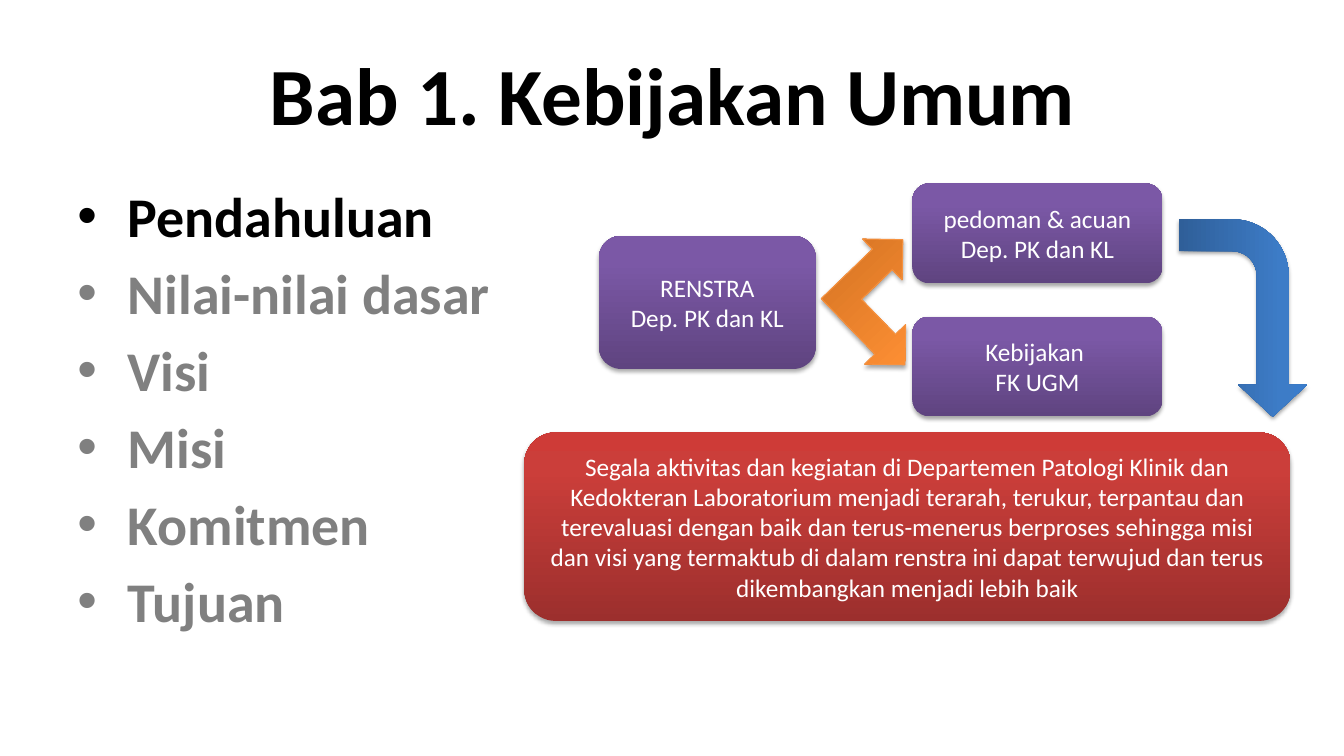
from lxml.etree import SubElement
from pptx import Presentation
from pptx.dml.color import RGBColor
from pptx.enum.shapes import MSO_SHAPE as Preset
from pptx.enum.text import MSO_ANCHOR as Anchor, PP_ALIGN as Align
from pptx.oxml.ns import qn
from pptx.util import Inches, Pt

COLOURS = {"black": "000000", "grey": "808080", "white": "FFFFFF", "orange edge": "F69240"}
GRADIENTS = {
    "purple": ("5F4480", "7B58A6", "7C57A8"),
    "orange": ("CC6E20", "FF9034", "FF9136"),
    "red": ("9C2F2D", "CB3E3A", "CE3B37"),
    "blue": ("2F5F99", "3D7CC7", "3A7CCB"),
}
STOPS = (0, 80, 100)
TOPICS = ("Pendahuluan", "Nilai-nilai dasar", "Visi", "Misi", "Komitmen", "Tujuan")
BOXES = (
    ((9.05, 1.82, 2.48, 0.99), "purple", ("pedoman & acuan", "Dep. PK dan KL")),
    ((5.94, 2.34, 2.15, 1.32), "purple", ("RENSTRA", "Dep. PK dan KL")),
    ((9.05, 3.14, 2.48, 0.99), "purple", ("Kebijakan ", "FK UGM")),
    ((5.2, 4.29, 7.6, 1.87), "red", (
        "Segala aktivitas dan kegiatan di Departemen Patologi Klinik dan "
        "Kedokteran Laboratorium menjadi terarah, terukur, terpantau dan "
        "terevaluasi dengan baik dan terus-menerus berproses sehingga misi "
        "dan visi yang termaktub di dalam renstra ini dapat terwujud dan terus "
        "dikembangkan menjadi lebih baik",)),
)


def rgb(name):
    """Return the named colour."""
    return RGBColor.from_string(COLOURS[name])


def add_span(para, text, size, colour, bold=False):
    """Add one formatted run to a paragraph."""
    span = para.add_run()
    span.text = text
    span.font.name = "Calibri"
    span.font.size = Pt(size)
    span.font.bold = bold
    span.font.color.rgb = rgb(colour)


def add_paragraph(frame, index):
    """Return the first paragraph of a frame, or a new one after it."""
    return frame.add_paragraph() if index else frame.paragraphs[0]


def add_text_box(page, place, anchor):
    """Add a wrapping text box and return it."""
    box = page.shapes.add_textbox(*map(Inches, place))
    box.text_frame.word_wrap = True
    box.text_frame.vertical_anchor = anchor
    return box


def add_title(page, text):
    """Add the centred slide title."""
    box = add_text_box(page, (0.67, 0.3, 12, 1.25), Anchor.MIDDLE)
    para = box.text_frame.paragraphs[0]
    para.alignment = Align.CENTER
    add_span(para, text, 58, "black", bold=True)


def add_topics(page, topics):
    """Add the bulleted chapter list with its first topic highlighted."""
    box = add_text_box(page, (0.67, 1.75, 4.91, 4.95), Anchor.TOP)
    box.fill.solid()
    box.fill.fore_color.rgb = rgb("white")
    for index, topic in enumerate(topics):
        para = add_paragraph(box.text_frame, index)
        if index:
            para.space_before = Pt(7)
        properties = para._p.get_or_add_pPr()
        properties.set("marL", str(Inches(0.5)))
        properties.set("indent", str(Inches(-0.5)))
        SubElement(properties, qn("a:buFont"), typeface="Arial")
        SubElement(properties, qn("a:buChar"), char="•")
        add_span(para, topic, 40, "grey" if index else "black", bold=True)


def add_glossy_shape(page, preset, place, gradient, rotation=0):
    """Add a preset shape with a gradient fill and a soft shadow."""
    shape = page.shapes.add_shape(preset, *map(Inches, place))
    shape.rotation = rotation
    shape.line.fill.background()
    shape.fill.gradient()
    shape.fill.gradient_angle = 90
    stops = shape._element.spPr.find(qn("a:gradFill")).find(qn("a:gsLst"))
    stops.clear()
    for position, colour in zip(STOPS, GRADIENTS[gradient]):
        stop = SubElement(stops, qn("a:gs"), pos=str(position * 1000))
        SubElement(stop, qn("a:srgbClr"), val=colour)
    shape.shadow.inherit = False
    effects = shape._element.spPr.find(qn("a:effectLst"))
    shadow = SubElement(effects, qn("a:outerShdw"), blurRad=str(Pt(3.1)),
                        dist=str(Pt(1.8)), dir="5400000", rotWithShape="0")
    tint = SubElement(shadow, qn("a:srgbClr"), val=COLOURS["black"])
    SubElement(tint, qn("a:alpha"), val="35000")
    return shape


def add_box(page, place, gradient, lines):
    """Add a rounded box with centred lines of text."""
    box = add_glossy_shape(page, Preset.ROUNDED_RECTANGLE, place, gradient)
    frame = box.text_frame
    frame.word_wrap = True
    frame.vertical_anchor = Anchor.MIDDLE
    for index, line in enumerate(lines):
        para = add_paragraph(frame, index)
        para.alignment = Align.CENTER
        add_span(para, line, 18, "white")


def add_arrows(page):
    """Add the forked arrow and the bent arrow between the boxes."""
    fork = add_glossy_shape(page, Preset.LEFT_UP_ARROW, (8.2, 2.4, 1.13, 1.19), "orange", 136)
    fork.line.color.rgb = rgb("orange edge")
    fork.line.width = Pt(0.75)
    bend = add_glossy_shape(page, Preset.BENT_ARROW, (11.35, 2.52, 1.96, 1.27), "blue", 90)
    for index, value in enumerate((0.25, 0.27, 0.25, 0.44)):
        bend.adjustments[index] = value


def main():
    """Build the slide and save the deck."""
    deck = Presentation()
    deck.slide_width = Inches(13.33)
    deck.slide_height = Inches(7.5)
    page = deck.slides.add_slide(deck.slide_layouts[6])
    add_title(page, "Bab 1. Kebijakan Umum")
    add_topics(page, TOPICS)
    for place, gradient, lines in BOXES:
        add_box(page, place, gradient, lines)
    add_arrows(page)
    deck.save("out.pptx")


if __name__ == "__main__":
    main()
